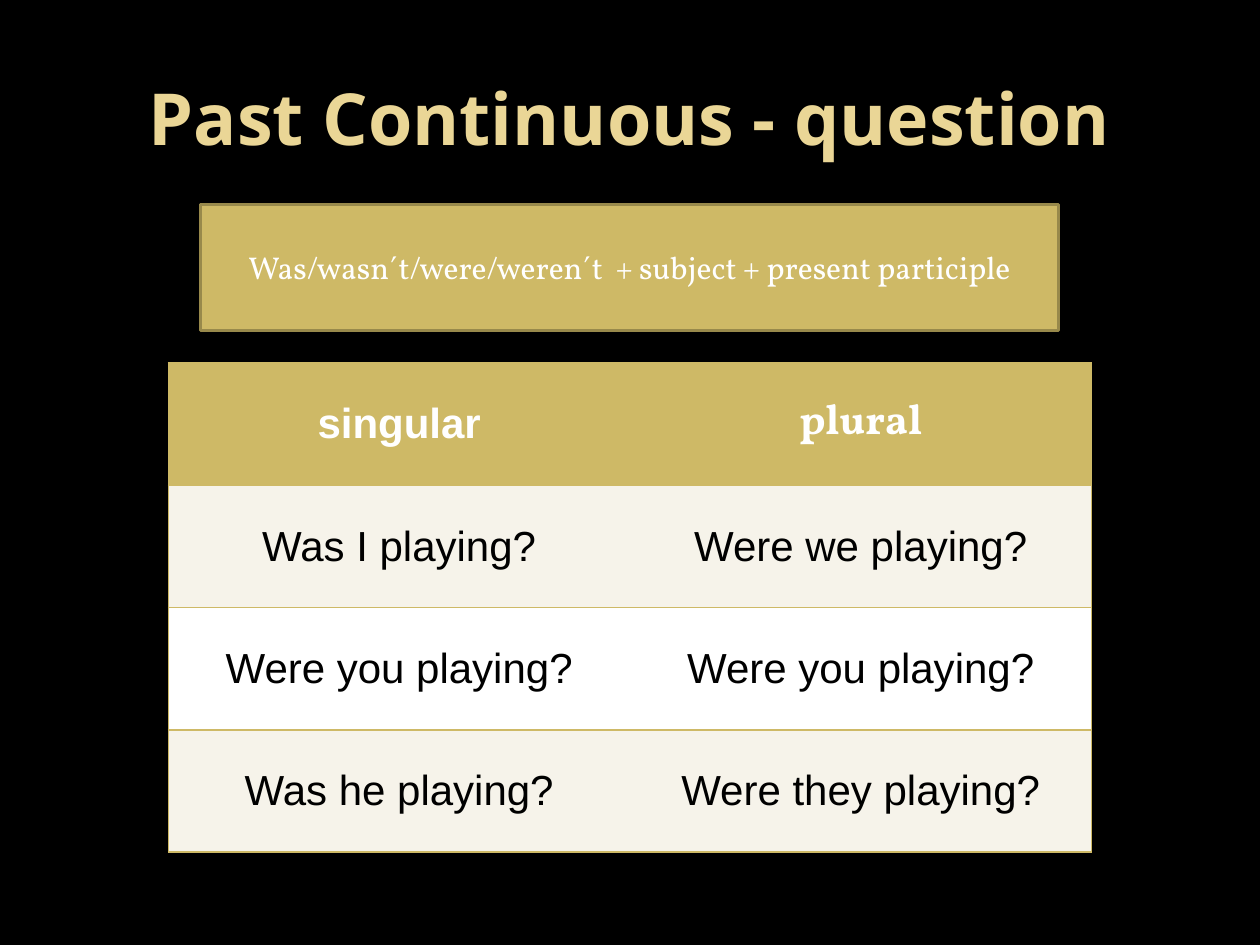
from pptx import Presentation
from pptx.dml.color import RGBColor
from pptx.enum.shapes import MSO_SHAPE
from pptx.enum.text import MSO_ANCHOR, PP_ALIGN
from pptx.oxml import parse_xml
from pptx.oxml.ns import nsdecls
from pptx.util import Pt

GOLD, CREAM, WHITE, BLACK = "CEB966", "F6F3EA", "FFFFFF", "000000"


def rgb(value):
    return RGBColor.from_string(value)


def write(tf, text, size, font, color, bold=False):
    """Put one centred, formatted line into a text frame."""
    tf.text = text
    tf.word_wrap = True
    tf.vertical_anchor = MSO_ANCHOR.MIDDLE
    p = tf.paragraphs[0]
    p.alignment = PP_ALIGN.CENTER
    f = p.runs[0].font
    f.size, f.name, f.bold = Pt(size), font, bold
    f.color.rgb = rgb(color)


prs = Presentation()
prs.slide_width, prs.slide_height = Pt(720), Pt(540)
s = prs.slides.add_slide(prs.slide_layouts[5])
s.background.fill.solid()
s.background.fill.fore_color.rgb = rgb(BLACK)

# Title
title = s.shapes.title
title.left, title.top, title.width, title.height = Pt(36), Pt(21.6), Pt(648), Pt(90)
write(title.text_frame, "Past Continuous - question", 41, "Open Sans", "EAD696", True)

# Table of question forms
rows = [
    ("singular", "plural"),
    ("Was I playing?", "Were we playing?"),
    ("Were you playing?", "Were you playing?"),
    ("Was he playing?", "Were they playing?"),
]
table = s.shapes.add_table(4, 2, Pt(96.25), Pt(207.5), Pt(527.5), Pt(279.6)).table
for row in table.rows:
    row.height = Pt(69.9)

for i, texts in enumerate(rows):
    for j, text in enumerate(texts):
        cell = table.cell(i, j)
        header = i == 0
        font = "Vollkorn" if text == "plural" else "Arial"
        write(cell.text_frame, text, 24, font, WHITE if header else BLACK, header)
        cell.vertical_anchor = MSO_ANCHOR.MIDDLE
        cell.fill.solid()
        cell.fill.fore_color.rgb = rgb(GOLD if header else CREAM if i % 2 else WHITE)
        # Gold rules all round, none between the columns
        inner = "R" if j == 0 else "L"
        for k, side in enumerate("LRTB"):
            paint = ("<a:noFill/>" if side == inner else
                     f'<a:solidFill><a:srgbClr val="{GOLD}"/></a:solidFill>')
            line = parse_xml(f'<a:ln{side} {nsdecls("a")} w="12700">{paint}</a:ln{side}>')
            cell._tc.get_or_add_tcPr().insert(k, line)

# Formula box
box = s.shapes.add_shape(MSO_SHAPE.RECTANGLE, Pt(114.5), Pt(116.8), Pt(490.5), Pt(72))
box.shadow.inherit = False
box.fill.solid()
box.fill.fore_color.rgb = rgb(GOLD)
box.line.color.rgb = rgb("98894B")
box.line.width = Pt(2)
write(box.text_frame, "Was/wasn´t/were/weren´t  + subject + present participle",
      18, "Vollkorn", WHITE)

prs.save("out.pptx")
